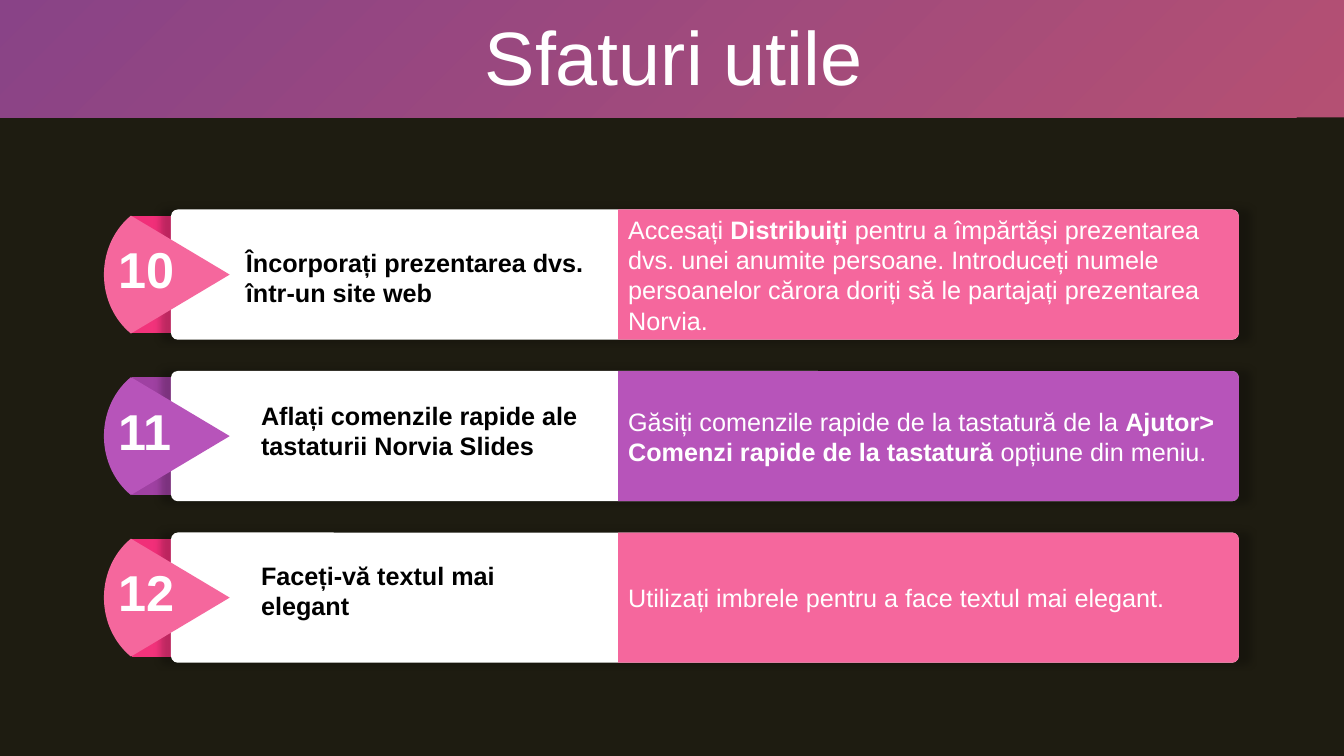
"""Build a slide with three numbered tips as cards under a gradient title band."""
from lxml import etree
from pptx import Presentation, util as u
from pptx.dml.color import RGBColor
from pptx.enum import shapes, text
from pptx.oxml import ns

TITLE = "Sfaturi utile"
PINK, PURPLE = "F5679D", "B754BA"
PINK_TAB, PURPLE_TAB = ["F12F79", "F2337B"], ["9F41A2"]
TIPS = [
    dict(number="10", label="Încorporați prezentarea dvs. într-un site web",
         label_box=(5.9, 0.81, 9.25), color=PINK, tab=PINK_TAB,
         body=[("Accesați ", False), ("Distribuiți ", True),
               ("pentru a împărtăși prezentarea dvs. unei anumite persoane. "
                "Introduceți numele persoanelor cărora doriți să le partajați "
                "prezentarea Norvia.", False)]),
    dict(number="11", label="Aflați comenzile rapide ale tastaturii Norvia Slides",
         label_box=(6.28, 0.6, 9.04), color=PURPLE, tab=PURPLE_TAB,
         body=[("Găsiți comenzile rapide de la tastatură de la ", False),
               ("Ajutor> Comenzi rapide de la tastatură", True),
               (" opțiune din meniu.", False)]),
    dict(number="12", label="Faceți-vă textul mai elegant",
         label_box=(6.28, 0.56, 7.82), color=PINK, tab=PINK_TAB,
         body=[("Utilizați imbrele pentru a face textul mai elegant.", False)]),
]
SLIDE_W, SLIDE_H, BAND_H = 33.87, 19.05, 2.96
FIRST_TOP, PITCH = 5.28, 4.07
CARD_L, CARD_W, CARD_H, RADIUS = 4.31, 26.91, 3.28, 0.17
CARD_R, PANEL_L = CARD_L + CARD_W, 15.58
TAB_L, TAB_W, TAB_H = 3.33, 6.12, 2.97
TIP_X, BASE_X, BULGE_X, ARC_L = 5.79, 3.3, 2.9, 2.62
BULGE_DY, ARC_DY = 1.16, 0.62
BEND = 0.45


def rgb(color):
    return RGBColor.from_string(color)


def paint(sp, color):
    sp.fill.solid()
    sp.fill.fore_color.rgb = rgb(color)
    sp.line.fill.background()
    sp.shadow.inherit = False


def gradient(sp, colors, angle, alpha=100):
    sp.fill.gradient()
    sp.fill.gradient_angle = 360 - angle
    for stop, color in zip(sp.fill.gradient_stops, colors):
        stop.color.rgb = rgb(color)
    for clr in sp._element.spPr.iter(ns.qn("a:srgbClr")):
        etree.SubElement(clr, ns.qn("a:alpha"), val=str(alpha * 1000))


def add_shadow(sp, blur, scale, alpha):
    effects = sp._element.spPr.find(ns.qn("a:effectLst"))
    shadow = etree.SubElement(effects, ns.qn("a:outerShdw"), blurRad=str(u.Pt(blur)),
                              sx=str(scale * 1000), sy=str(scale * 1000),
                              algn="ctr", rotWithShape="0")
    clr = etree.SubElement(shadow, ns.qn("a:srgbClr"), val="000000")
    etree.SubElement(clr, ns.qn("a:alpha"), val=str(alpha * 1000))


def add_box(slide, kind, left, top, width, height, color):
    sp = slide.shapes.add_shape(kind, *map(u.Cm, (left, top, width, height)))
    paint(sp, color)
    return sp


def add_outline(slide, segments, color):
    """Draw segments in order: one point is a line, three points are a curve."""
    points = [(u.Cm(x), u.Cm(y)) for segment in segments for x, y in segment]
    builder = slide.shapes.build_freeform(*points[0])
    builder.add_line_segments(points[1:], close=True)
    sp = builder.convert_to_shape()
    lines = iter(list(sp._element.spPr.iter(ns.qn("a:lnTo"))))
    for segment in segments[1:]:
        steps = [next(lines) for _ in segment]
        if len(steps) == 3:
            curve = etree.Element(ns.qn("a:cubicBezTo"))
            steps[0].addprevious(curve)
            for step in steps:
                curve.append(step[0])
                step.getparent().remove(step)
    paint(sp, color)
    return sp


def write(sp, runs, size, color, anchor=text.MSO_ANCHOR.MIDDLE, align=text.PP_ALIGN.LEFT):
    tf = sp.text_frame
    tf.word_wrap = True
    tf.vertical_anchor = anchor
    p = tf.paragraphs[0]
    p.alignment = align
    for words, bold in runs:
        r = p.add_run()
        r.text = words
        r.font.name, r.font.size, r.font.bold = "Arial", u.Pt(size), bold
        r.font.color.rgb = rgb(color)
    return p


def add_text(slide, left, top, width, height, *args, inset=0.3, **kwargs):
    sp = slide.shapes.add_textbox(*map(u.Cm, (left, top, width, height)))
    sp.text_frame.margin_left = sp.text_frame.margin_right = u.Cm(inset)
    return write(sp, *args, **kwargs)


def add_wedge(slide, mid, color):
    half = TAB_H / 2
    add_outline(slide, [
        [(TIP_X, mid)], [(BASE_X, mid + half)],
        [(BULGE_X, mid + BULGE_DY), (ARC_L, mid + ARC_DY), (ARC_L, mid)],
        [(ARC_L, mid - ARC_DY), (BULGE_X, mid - BULGE_DY), (BASE_X, mid - half)],
    ], color)


def add_panel(slide, top, color):
    bottom, corner_x, bend = top + CARD_H, CARD_R - RADIUS, RADIUS * BEND
    return add_outline(slide, [
        [(PANEL_L, top)], [(corner_x, top)],
        [(CARD_R - bend, top), (CARD_R, top + bend), (CARD_R, top + RADIUS)],
        [(CARD_R, bottom - RADIUS)],
        [(CARD_R, bottom - bend), (CARD_R - bend, bottom), (corner_x, bottom)],
        [(PANEL_L, bottom)],
    ], color)


def add_tip(slide, tip, top):
    mid = top + CARD_H / 2
    tab = add_box(slide, shapes.MSO_SHAPE.RECTANGLE, TAB_L, mid - TAB_H / 2,
                  TAB_W, TAB_H, tip["tab"][0])
    if len(tip["tab"]) > 1:
        gradient(tab, tip["tab"], 90)
    card = add_box(slide, shapes.MSO_SHAPE.ROUNDED_RECTANGLE, CARD_L, top,
                   CARD_W, CARD_H, "FFFFFF")
    card.adjustments[0] = RADIUS / CARD_H
    add_shadow(card, 5, 102, 22)
    add_wedge(slide, mid, tip["color"])
    write(add_panel(slide, top, tip["color"]), tip["body"], 18, "FFFFFF")
    left, drop, width = tip["label_box"]
    add_text(slide, left, top + drop, width, 1.8, [(tip["label"], True)], 18, "000000")
    add_text(slide, 2.69, top + 0.6, 3.18, 1.8, [(tip["number"], True)], 36, "FFFFFF",
             anchor=text.MSO_ANCHOR.TOP)


def main():
    prs = Presentation()
    prs.slide_width, prs.slide_height = u.Cm(SLIDE_W), u.Cm(SLIDE_H)
    s = prs.slides.add_slide(prs.slide_layouts[6])
    s.background.fill.solid()
    s.background.fill.fore_color.rgb = rgb("1E1C11")
    band = add_box(s, shapes.MSO_SHAPE.RECTANGLE, 0, 0, SLIDE_W, BAND_H, PINK)
    gradient(band, [PINK, PURPLE], 225, alpha=70)
    p = add_text(s, 0.9, 0.53, 32.16, 2.01, [(TITLE, False)], 54, "FFFFFF",
                 align=text.PP_ALIGN.CENTER, inset=0.25)
    p.line_spacing, p.space_before = 0.9, u.Pt(10)
    for i, tip in enumerate(TIPS):
        add_tip(s, tip, FIRST_TOP + i * PITCH)
    prs.save("out.pptx")


if __name__ == "__main__":
    main()
